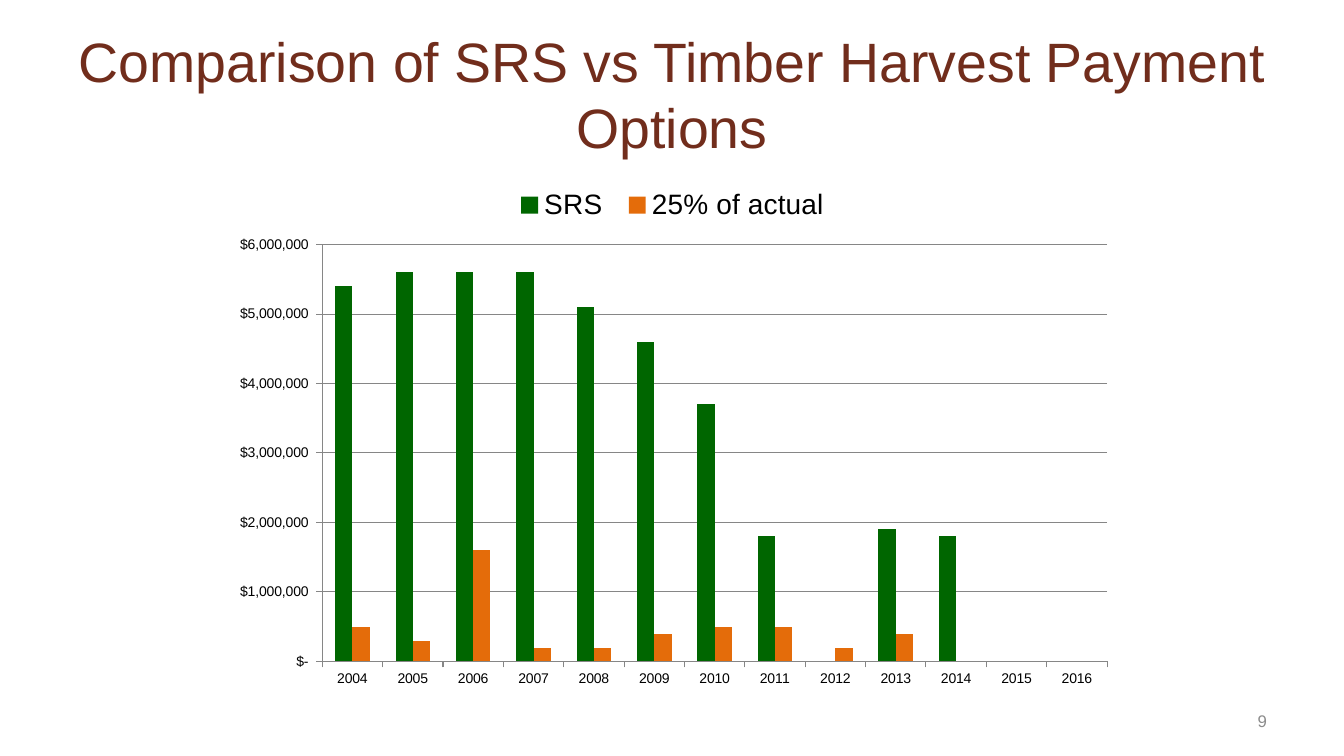
from lxml.etree import SubElement
from pptx import Presentation
from pptx.chart.data import CategoryChartData
from pptx.dml.color import RGBColor
from pptx.enum.chart import XL_CHART_TYPE, XL_LEGEND_POSITION, XL_TICK_MARK
from pptx.enum.text import MSO_ANCHOR, MSO_AUTO_SIZE, PP_ALIGN
from pptx.oxml.ns import qn
from pptx.util import Inches, Pt

WIDTH, HEIGHT = 13.33, 7.5
MARGIN = 0.05 * WIDTH
FONT = "Arial"
YEARS = range(2004, 2017)
PAYMENTS = {
    "SRS ": ("006600", [5400000, 5600000, 5600000, 5600000, 5100000, 4600000, 3700000,
                        1800000, None, 1900000, 1800000, None, None]),
    "25% of actual": ("E46C0A", [500000, 300000, 1600000, 200000, 200000, 400000, 500000,
                                 500000, 200000, 400000, None, None, None]),
}
DOLLARS = '_("$"* #,##0_);_("$"* \\(#,##0\\);_("$"* "-"_);_(@_)'
PLOT_SHARES = {"x": 0.114, "y": 0.131, "w": 0.865, "h": 0.8}


def color(hex_code):
    """Turn a hex string into a colour."""
    return RGBColor.from_string(hex_code)


def style_font(font, size, hex_code):
    """Give a font its face, size and colour."""
    font.name, font.size = FONT, Pt(size)
    font.color.rgb = color(hex_code)


def write_line(shape, text, size, hex_code, align):
    """Fill a shape with one vertically centred paragraph."""
    frame = shape.text_frame
    frame.text = text
    frame.word_wrap = True
    frame.auto_size = MSO_AUTO_SIZE.NONE
    frame.vertical_anchor = MSO_ANCHOR.MIDDLE
    paragraph = frame.paragraphs[0]
    paragraph.alignment = align
    style_font(paragraph.font, size, hex_code)


def place_title(slide, box):
    """Put the heading in the title placeholder."""
    title = slide.shapes.title
    title.left, title.top, title.width, title.height = map(Inches, box)
    write_line(title, "Comparison of SRS vs Timber Harvest Payment Options",
               39.6, "712D1C", PP_ALIGN.CENTER)


def fix_plot_area(chart):
    """Set the inner plot area as shares of the chart."""
    plot_area = chart._chartSpace.chart.plotArea
    for old_layout in plot_area.findall(qn("c:layout")):
        plot_area.remove(old_layout)
    layout = SubElement(plot_area, qn("c:layout"))
    plot_area.insert(0, layout)
    manual = SubElement(layout, qn("c:manualLayout"))
    settings = {"layoutTarget": "inner", "xMode": "edge", "yMode": "edge", **PLOT_SHARES}
    for tag, value in settings.items():
        SubElement(manual, qn(f"c:{tag}")).set("val", str(value))


def place_chart(slide, box):
    """Draw the yearly payments as clustered columns."""
    payments = CategoryChartData(number_format=DOLLARS)
    payments.categories = [str(year) for year in YEARS]
    for name, (_, amounts) in PAYMENTS.items():
        payments.add_series(name, amounts)
    chart = slide.shapes.add_chart(
        XL_CHART_TYPE.COLUMN_CLUSTERED, *map(Inches, box), payments).chart
    style_font(chart.font, 10, "000000")
    chart.has_title = False
    chart.has_legend = True
    chart.legend.position = XL_LEGEND_POSITION.TOP
    chart.legend.include_in_layout = False
    style_font(chart.legend.font, 20, "000000")

    columns = chart.plots[0]
    columns.gap_width, columns.overlap = 150, 0
    columns.vary_by_categories = False
    for series, (hex_code, _) in zip(columns.series, PAYMENTS.values()):
        series.format.fill.solid()
        series.format.fill.fore_color.rgb = color(hex_code)

    years, dollars = chart.category_axis, chart.value_axis
    dollars.minimum_scale, dollars.maximum_scale = 0, 6000000
    dollars.major_unit = 1000000
    dollars.has_major_gridlines = True
    dollars.tick_labels.number_format = DOLLARS
    dollars.tick_labels.number_format_is_linked = False
    for axis in (years, dollars):
        axis.major_tick_mark = XL_TICK_MARK.OUTSIDE
        axis.minor_tick_mark = XL_TICK_MARK.NONE
    for ruled in (years, dollars, dollars.major_gridlines):
        ruled.format.line.color.rgb = color("868686")
        ruled.format.line.width = Pt(0.75)
    fix_plot_area(chart)


def place_page_number(slide, box):
    """Write the page number at the lower right."""
    page_number = slide.shapes.add_textbox(*map(Inches, box))
    write_line(page_number, "9", 12, "8C8C8C", PP_ALIGN.RIGHT)


def main():
    """Build and save the slide."""
    deck = Presentation()
    deck.slide_width, deck.slide_height = Inches(WIDTH), Inches(HEIGHT)
    slide = deck.slides.add_slide(deck.slide_layouts[5])
    content_width = WIDTH - 2 * MARGIN
    number_width = 3.11
    place_title(slide, (MARGIN, 0.04 * HEIGHT, content_width, HEIGHT / 6))
    place_chart(slide, (2.17, 1.75, 9, 5.17))
    place_page_number(slide, (WIDTH - MARGIN - number_width, 6.95, number_width, 0.4))
    deck.save("out.pptx")


if __name__ == "__main__":
    main()
